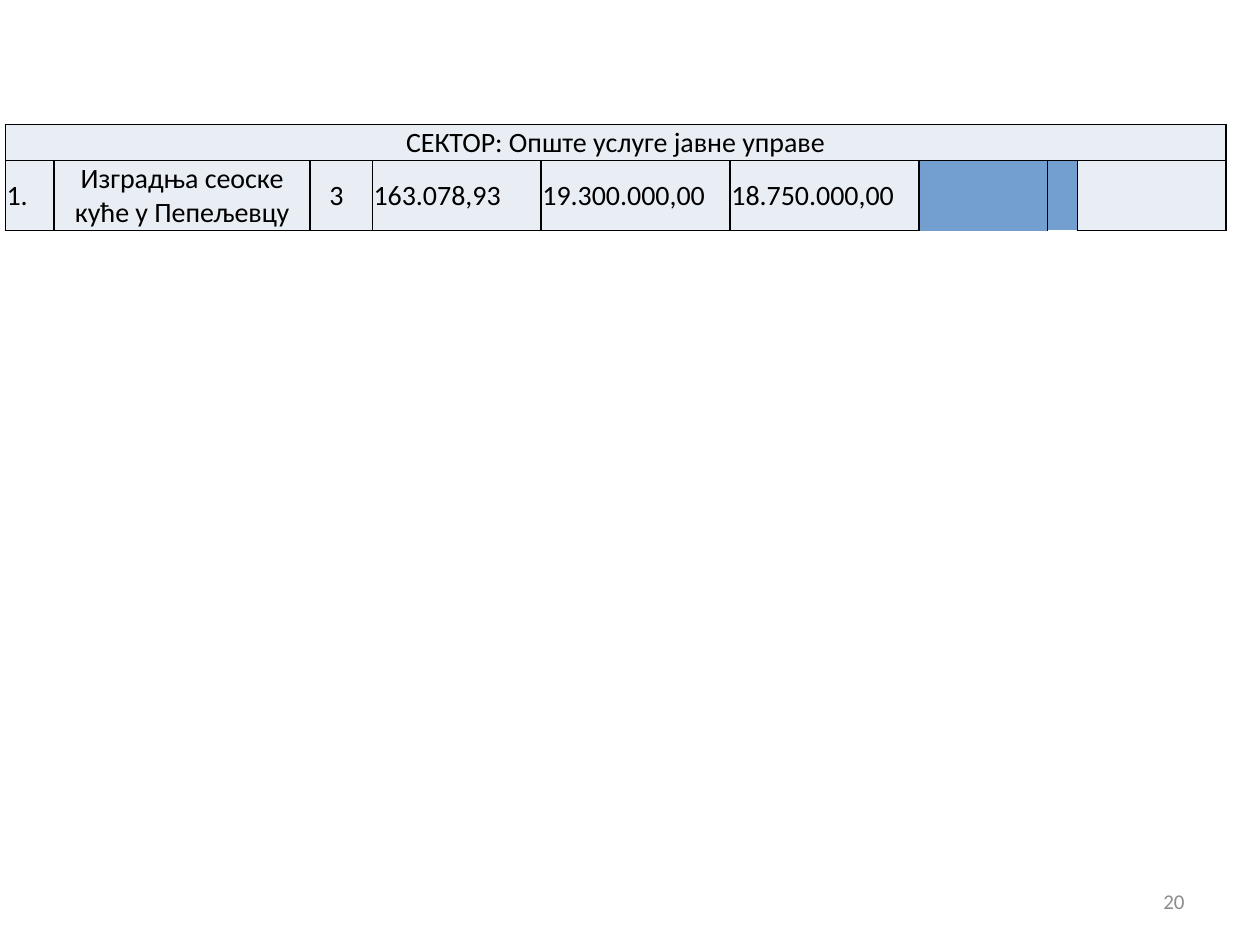
"""Build the sector table slide with its page number."""
from pptx import Presentation
from pptx.dml.color import RGBColor
from pptx.enum.text import MSO_ANCHOR as Anchor, PP_ALIGN as Align
from pptx.oxml import parse_xml
from pptx.oxml.ns import nsdecls
from pptx.util import Pt


def color(code):
    return RGBColor.from_string(code)


def style(frame, align, size, code):
    for para in frame.paragraphs:
        para.alignment = align
        for run in para.runs:
            run.font.name = "Calibri"
            run.font.size = Pt(size)
            run.font.color.rgb = color(code)


deck = Presentation()
deck.slide_width, deck.slide_height = Pt(720), Pt(540)
slide = deck.slides.add_slide(deck.slide_layouts[6])

box = slide.shapes.add_textbox(Pt(516), Pt(500.5), Pt(168), Pt(28.75))
frame = box.text_frame
frame.word_wrap = True
frame.vertical_anchor = Anchor.MIDDLE
frame.text = "20"
style(frame, Align.RIGHT, 12, "8C8C8C")

widths = [28, 146.25, 35.5, 96.5, 108, 96.5, 11.5, 73.5, 17, 85]
heights = [20.5, 40]
table = slide.shapes.add_table(
    2, len(widths), Pt(3), Pt(71.25), Pt(sum(widths)), Pt(sum(heights))
).table
for col, width in zip(table.columns, widths):
    col.width = Pt(width)
for row, height in zip(table.rows, heights):
    row.height = Pt(height)

table.cell(0, 0).merge(table.cell(0, 9))
for left in (5, 8):
    table.cell(1, left).merge(table.cell(1, left + 1))

texts = {
    (0, 0): "СЕКТОР: Опште услуге јавне управе",
    (1, 0): "1.",
    (1, 1): "Изградња сеоске куће у Пепељевцу",
    (1, 2): "3",
    (1, 3): "163.078,93",
    (1, 4): "19.300.000,00",
    (1, 5): "18.750.000,00",
}
center = [(0, 0), (1, 1)]
bare = {(1, 6): ["lnL"], (1, 5): ["lnR"], (1, 7): ["lnB"]}

for r in range(2):
    for c in range(len(widths)):
        cell = table.cell(r, c)
        cell.margin_left = Pt(11 if (r, c) == (1, 2) else 0.75)
        cell.margin_right = cell.margin_top = Pt(0.75)
        cell.margin_bottom = 0
        cell.vertical_anchor = Anchor.MIDDLE
        if (r, c) in texts:
            cell.text_frame.text = texts[r, c]
            align = Align.CENTER if (r, c) in center else Align.JUSTIFY
            style(cell.text_frame, align, 16, "000000")
        else:
            cell.text_frame.paragraphs[0].font.size = Pt(16)
        props = cell._tc.get_or_add_tcPr()
        for side in ("lnL", "lnR", "lnT", "lnB"):
            if side in bare.get((r, c), []):
                continue
            props.append(parse_xml(
                f'<a:{side} {nsdecls("a")} w="12700"><a:solidFill>'
                f'<a:srgbClr val="000000"/></a:solidFill></a:{side}>'
            ))
        cell.fill.solid()
        cell.fill.fore_color.rgb = color("729FCF" if (r, c) == (1, 7) else "E9EDF4")

deck.save("out.pptx")
